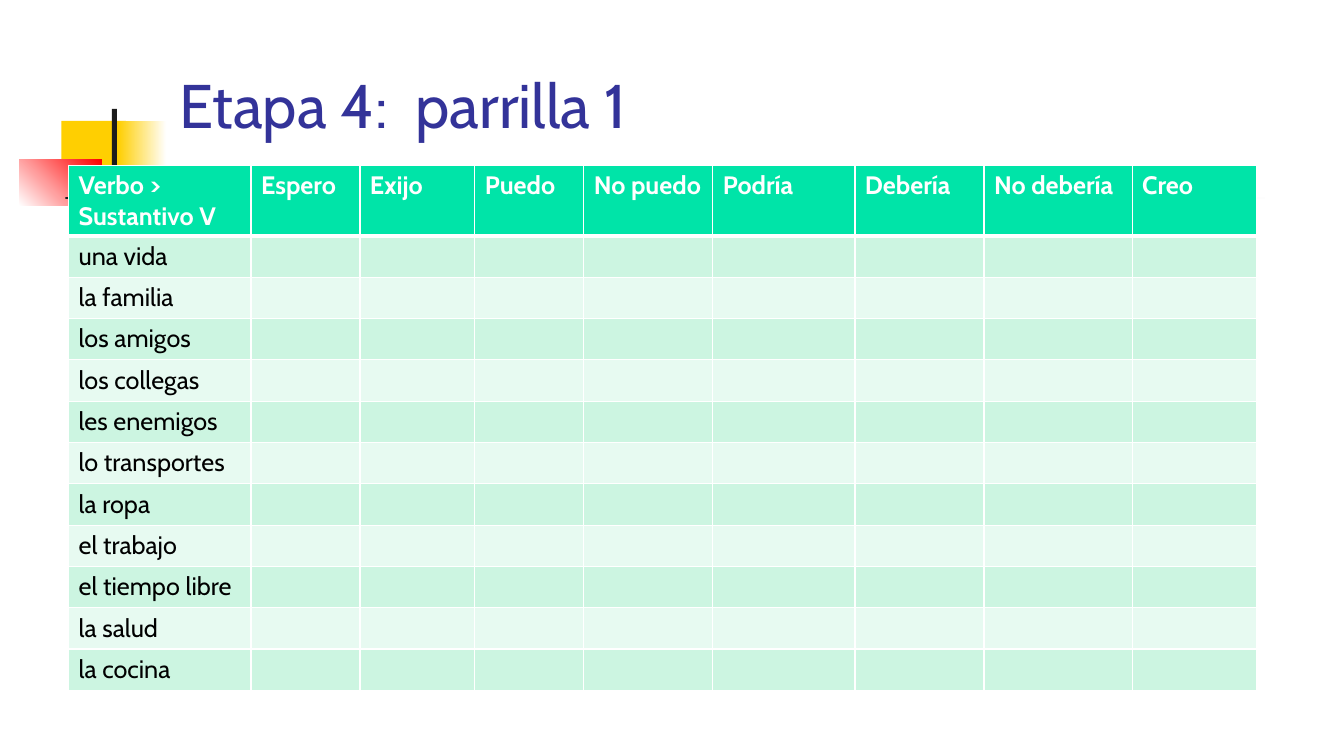
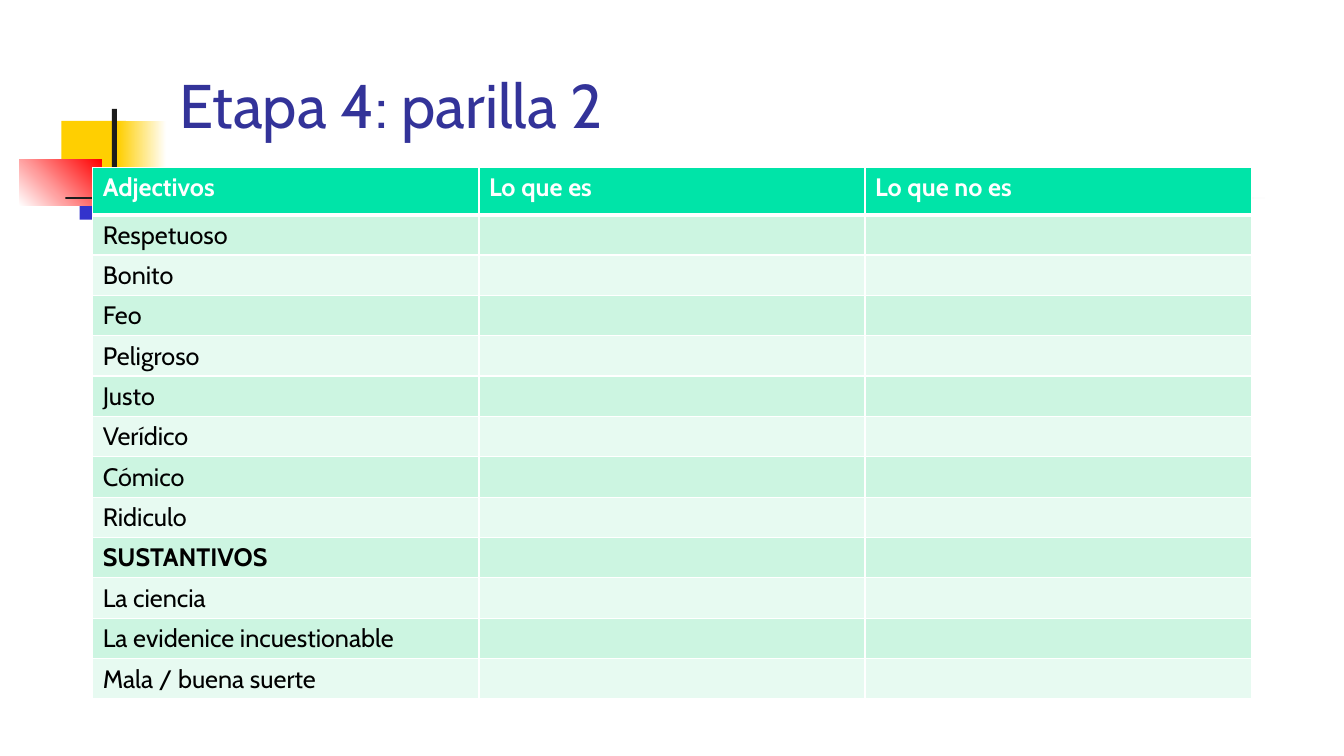
from dataclasses import dataclass

from lxml.etree import SubElement
from pptx import Presentation
from pptx.dml.color import RGBColor
from pptx.enum.shapes import MSO_SHAPE as SHAPE
from pptx.enum.text import MSO_ANCHOR as ANCHOR
from pptx.oxml.ns import qn
from pptx.util import Inches, Pt

# Shared style
FONT = "Cabin"
WHITE, BLACK, INK = "FFFFFF", "000000", "1C1C1C"
TITLE, HEADER = "333399", "00E4A8"
YELLOW, BLUE, RED = "FFCF01", "3333CC", "FF0000"
BANDS = ("CCF5E1", "E7FAF1")


@dataclass
class Block:
    left: float
    top: float
    width: float
    height: float
    color: str
    end: str = ""  # second gradient colour, empty for a solid fill
    angle: float = 0


@dataclass
class Grid:
    title: str
    left: float
    top: float
    widths: list[float]
    header_height: float
    row_height: float
    headers: list[str]
    labels: list[str]
    bold_label: str = ""


ORNAMENT = [
    Block(0.61, 1.2, 0.64, 0.52, YELLOW),
    Block(1.17, 1.2, 0.48, 0.52, YELLOW, WHITE),
    Block(0.79, 1.66, 0.62, 0.52, BLUE),
    Block(1.33, 1.66, 0.54, 0.52, BLUE, WHITE),
    Block(0.19, 1.58, 0.82, 0.46, WHITE, RED, 45),
    Block(1.11, 1.08, 0.05, 1.15, INK),
    Block(0.65, 1.95, 12, 0.03, INK, WHITE),
]

GRIDS = [
    Grid(
        "Etapa 4:  parrilla 1", 0.68, 1.64,
        [1.81, 1.08, 1.14, 1.08, 1.28, 1.41, 1.28, 1.47, 1.23], 0.7, 0.41,
        ["Verbo >\nSustantivo V", "Espero", "Exijo", "Puedo", "No puedo",
         "Podría", "Debería", "No debería", "Creo"],
        ["una vida", "la familia", "los amigos", "los collegas",
         "les enemigos", "lo transportes", "la ropa", "el trabajo",
         "el tiempo libre", "la salud", "la cocina"],
    ),
    Grid(
        "Etapa 4: parilla 2", 0.92, 1.66, [3.83] * 3, 0.47, 0.4,
        ["Adjectivos", "Lo que es", "Lo que no es"],
        ["Respetuoso", "Bonito", "Feo", "Peligroso", "Justo", "Verídico",
         "Cómico", "Ridiculo", "SUSTANTIVOS", "La ciencia",
         "La evidenice incuestionable", "Mala / buena suerte"],
        "SUSTANTIVOS",
    ),
]


def rgb(color: str) -> RGBColor:
    return RGBColor.from_string(color)


def style_text(tf, size: float, color: str, bold: bool = False) -> None:
    for p in tf.paragraphs:
        for r in p.runs:
            r.font.name, r.font.size, r.font.bold = FONT, Pt(size), bold
            r.font.color.rgb = rgb(color)


def add_block(s, block: Block) -> None:
    sp = s.shapes.add_shape(
        SHAPE.RECTANGLE, Inches(block.left), Inches(block.top),
        Inches(block.width), Inches(block.height))
    sp.shadow.inherit = False
    sp.line.fill.background()
    if block.end:
        sp.fill.gradient()
        sp.fill.gradient_angle = block.angle
        for stop, color in zip(sp.fill.gradient_stops, (block.color, block.end)):
            stop.color.rgb = rgb(color)
    else:
        sp.fill.solid()
        sp.fill.fore_color.rgb = rgb(block.color)


def add_title(s, text: str) -> None:
    sp = s.shapes.add_textbox(Inches(1.68), Inches(0.23), Inches(11.36), Inches(1.6))
    tf = sp.text_frame
    tf.word_wrap = True
    tf.vertical_anchor = ANCHOR.MIDDLE
    tf.text = text
    style_text(tf, 44, TITLE)


def set_borders(cell, top: float, bottom: float) -> None:
    tc_pr = cell._tc.get_or_add_tcPr()
    for side, width in (("L", 1), ("R", 1), ("T", top), ("B", bottom)):
        ln = SubElement(tc_pr, qn(f"a:ln{side}"), w=str(Pt(width)))
        fill = SubElement(ln, qn("a:solidFill"))
        SubElement(fill, qn("a:srgbClr"), val=WHITE)


def add_grid(s, grid: Grid) -> None:
    rows = [grid.headers] + [[label] for label in grid.labels]
    heights = [grid.header_height] + [grid.row_height] * len(grid.labels)
    table = s.shapes.add_table(
        len(rows), len(grid.widths), Inches(grid.left), Inches(grid.top),
        Inches(sum(grid.widths)), Inches(sum(heights))).table
    for column, width in zip(table.columns, grid.widths):
        column.width = Inches(width)

    for i, (row, height, texts) in enumerate(zip(table.rows, heights, rows)):
        row.height = Inches(height)
        is_header = i == 0
        for cell in row.cells:
            set_borders(cell, 3 if i == 1 else 1, 3 if is_header else 1)
            cell.fill.solid()
            cell.fill.fore_color.rgb = rgb(HEADER if is_header else BANDS[(i - 1) % 2])
        for cell, text in zip(row.cells, texts):
            cell.text_frame.text = text
            style_text(cell.text_frame, 18, WHITE if is_header else BLACK,
                       is_header or text == grid.bold_label)


def main() -> None:
    prs = Presentation()
    prs.slide_width, prs.slide_height = Inches(13.33), Inches(7.5)
    for grid in GRIDS:
        s = prs.slides.add_slide(prs.slide_layouts[6])
        for block in ORNAMENT:
            add_block(s, block)
        add_title(s, grid.title)
        add_grid(s, grid)
    prs.save("out.pptx")


if __name__ == "__main__":
    main()
